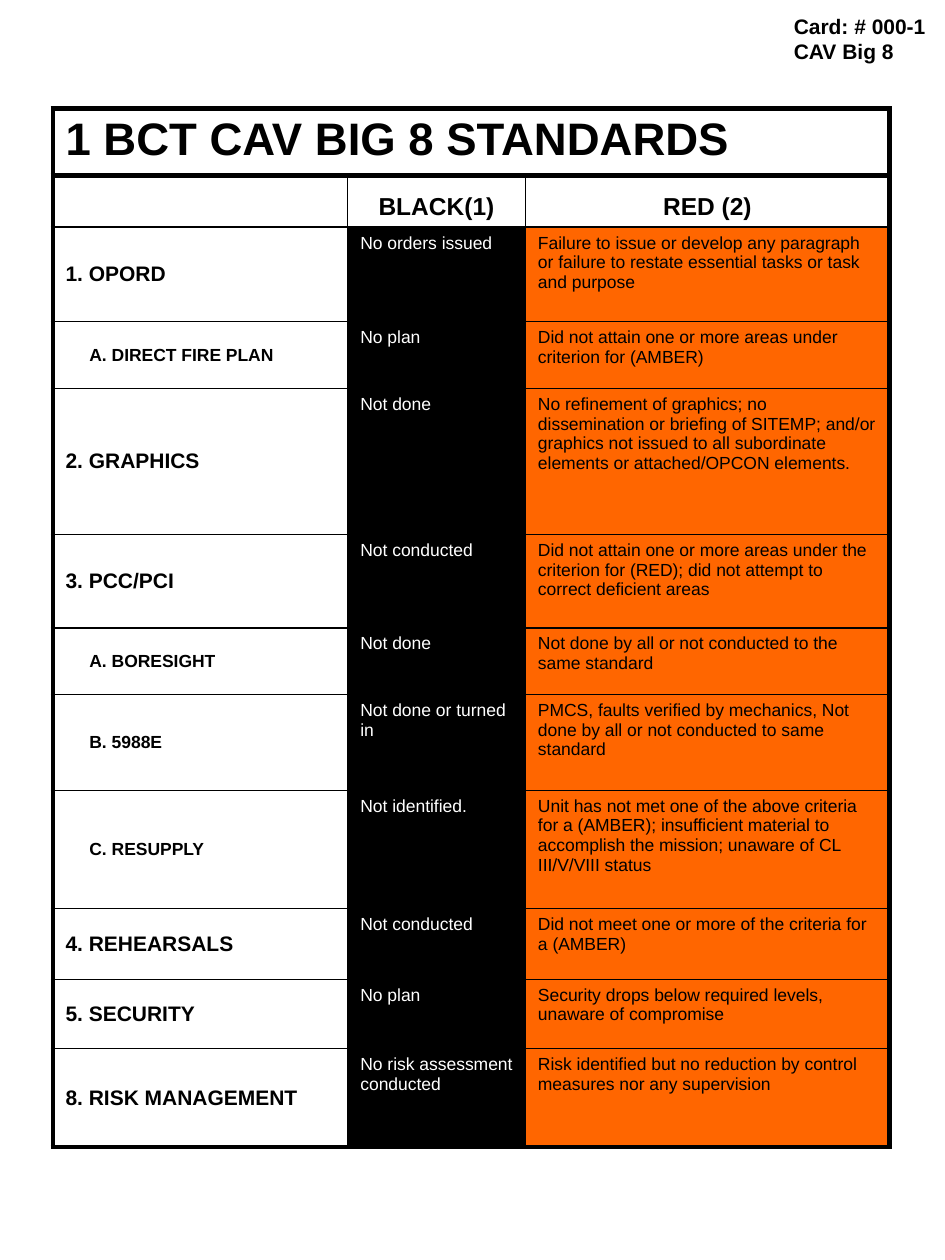
from dataclasses import dataclass

from lxml.etree import SubElement
from pptx import Presentation
from pptx.dml.color import RGBColor
from pptx.enum.text import MSO_ANCHOR, PP_ALIGN
from pptx.oxml.ns import qn
from pptx.util import Inches, Pt


@dataclass(frozen=True)
class Theme:
    font: str = "Arial"
    black: str = "000000"
    white: str = "FFFFFF"
    red: str = "FF6600"
    title: int = 26
    header: int = 14
    label: int = 12
    body: int = 10
    thin: int = 1
    thick: int = 3


class Card:
    def __init__(self, prs, theme):
        self.theme = theme
        self.s = prs.slides.add_slide(prs.slide_layouts[6])

    def run(self, p, text, size, bold=False, color=None):
        r = p.add_run()
        r.text = text
        r.font.name = self.theme.font
        r.font.size = Pt(size)
        r.font.bold = bold
        r.font.color.rgb = RGBColor.from_string(color or self.theme.black)

    def text(self, lines, left, top, width, height):
        sp = self.s.shapes.add_textbox(Inches(left), Inches(top), Inches(width), Inches(height))
        tf = sp.text_frame
        tf.word_wrap = True
        tf.margin_left = tf.margin_right = Inches(0.05)
        tf.margin_top = tf.margin_bottom = Inches(0.03)
        p = tf.paragraphs[0]
        for i, line in enumerate(lines):
            if i:
                p.add_line_break()
            self.run(p, line, self.theme.label, bold=True)

    def table(self, left, top, widths, heights):
        frame = self.s.shapes.add_table(
            len(heights), len(widths), Inches(left), Inches(top),
            Inches(sum(widths)), Inches(sum(heights)))
        table = frame.table
        table.first_row = table.horz_banding = False
        for column, width in zip(table.columns, widths):
            column.width = Inches(width)
        for row, height in zip(table.rows, heights):
            row.height = Inches(height)
        for i in range(len(heights)):
            for j in range(len(widths)):
                heavy = {
                    "lnL": i == 0 or j == 0,
                    "lnR": i == 0 or j == len(widths) - 1,
                    "lnT": i <= 1,
                    "lnB": i in (0, len(heights) - 1),
                }
                self.borders(table.cell(i, j), heavy)
        return table

    def borders(self, cell, heavy):
        tcPr = cell._tc.get_or_add_tcPr()
        for side, thick in heavy.items():
            width = self.theme.thick if thick else self.theme.thin
            ln = SubElement(tcPr, qn(f"a:{side}"), w=str(Pt(width)))
            fill = SubElement(ln, qn("a:solidFill"))
            SubElement(fill, qn("a:srgbClr"), val=self.theme.black)

    def cell(self, cell, text, size, bold=False, color=None, fill=None,
             anchor=MSO_ANCHOR.TOP, align=PP_ALIGN.LEFT, indent=0):
        cell.fill.solid()
        cell.fill.fore_color.rgb = RGBColor.from_string(fill or self.theme.white)
        cell.vertical_anchor = anchor
        cell.margin_left = Inches(0.1 + indent)
        if text:
            p = cell.text_frame.paragraphs[0]
            p.alignment = align
            self.run(p, text, size, bold, color)


STANDARDS = [
    ("1. OPORD", "No orders issued",
     "Failure to issue or develop any paragraph or failure to restate essential tasks or task and purpose", 0.75),
    ("A. DIRECT FIRE PLAN", "No plan",
     "Did not attain one or more areas under criterion for (AMBER)", 0.53),
    ("2. GRAPHICS", "Not done",
     "No refinement of graphics; no dissemination or briefing of SITEMP; and/or graphics not issued "
     "to all subordinate elements or attached/OPCON elements.", 1.16),
    ("3. PCC/PCI", "Not conducted",
     "Did not attain one or more areas under the criterion for (RED); "
     "did not attempt to correct deficient areas", 0.74),
    ("A. BORESIGHT", "Not done",
     "Not done by all or not conducted to the same standard", 0.53),
    ("B. 5988E", "Not done or turned in",
     "PMCS, faults verified by mechanics, Not done by all or not conducted to same standard", 0.76),
    ("C. RESUPPLY", "Not identified.",
     "Unit has not met one of the above criteria for a (AMBER); insufficient material to "
     "accomplish the mission; unaware of CL III/V/VIII status", 0.94),
    ("4. REHEARSALS", "Not conducted",
     "Did not meet one or more of the criteria for a (AMBER)", 0.56),
    ("5. SECURITY", "No plan",
     "Security drops below required levels, unaware of compromise", 0.55),
    ("8. RISK MANAGEMENT", "No risk assessment conducted",
     "Risk identified but no reduction by control measures nor any supervision", 0.78),
]


def main():
    prs = Presentation()
    prs.slide_width, prs.slide_height = Inches(7.5), Inches(10)
    theme = Theme()
    card = Card(prs, theme)
    card.text(["Card: # 000-1", "CAV Big 8"], 6.25, 0.08, 1.17, 0.83)

    heights = [0.49, 0.41] + [row[-1] for row in STANDARDS]
    table = card.table(0.42, 0.86, [2.34, 1.41, 2.89], heights)
    table.cell(0, 0).merge(table.cell(0, 2))
    card.cell(table.cell(0, 0), "1 BCT CAV BIG 8 STANDARDS", theme.title, bold=True)
    for j, heading in enumerate(["", "BLACK(1)", "RED (2)"]):
        card.cell(table.cell(1, j), heading, theme.header, bold=True,
                  anchor=MSO_ANCHOR.BOTTOM, align=PP_ALIGN.CENTER)

    for i, (label, black, red, _) in enumerate(STANDARDS, start=2):
        sub = label[0].isalpha()
        card.cell(table.cell(i, 0), label, theme.body if sub else theme.label, bold=True,
                  anchor=MSO_ANCHOR.MIDDLE, indent=0.19 if sub else 0)
        card.cell(table.cell(i, 1), black, theme.body, color=theme.white, fill=theme.black)
        card.cell(table.cell(i, 2), red, theme.body, fill=theme.red)

    prs.save("out.pptx")


if __name__ == "__main__":
    main()
